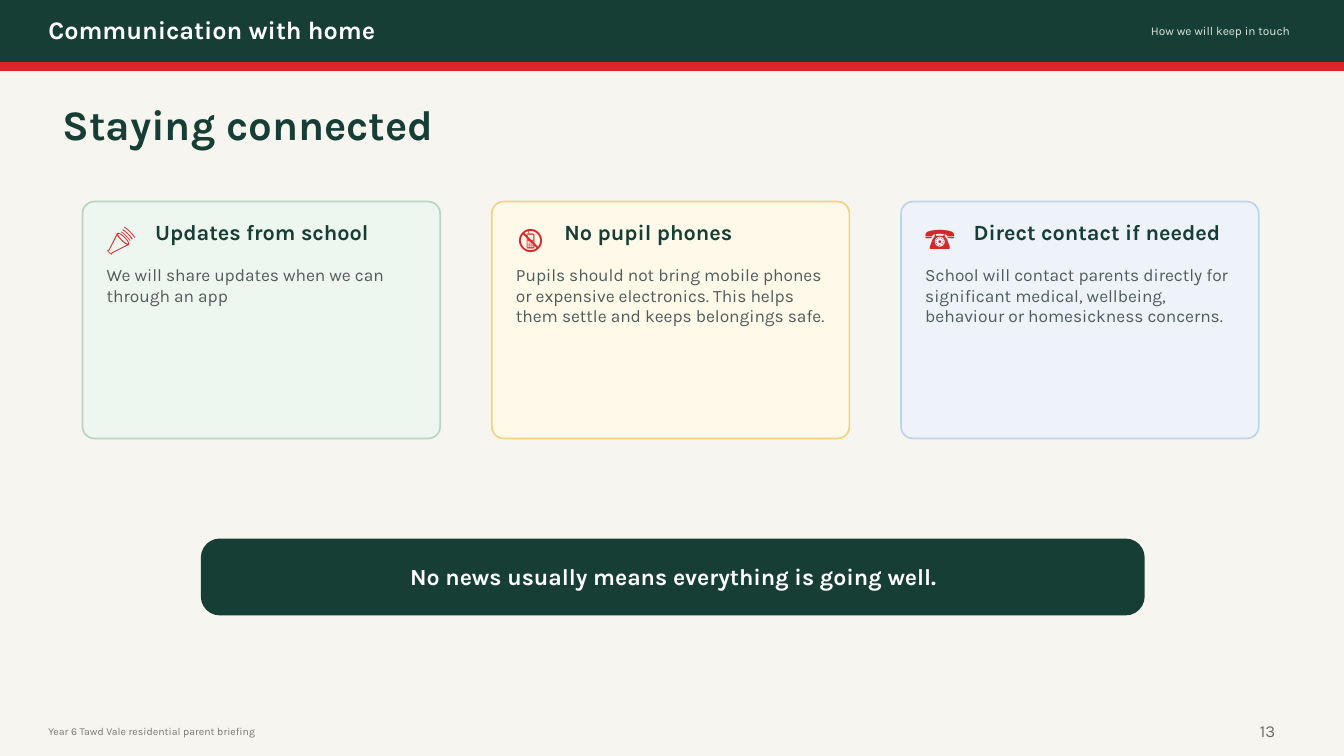
from dataclasses import dataclass

from pptx import Presentation
from pptx import util as u
from pptx.dml.color import RGBColor
from pptx.enum import shapes, text


@dataclass(frozen=True)
class Theme:
    font: str = "Karla"
    # Colours
    paper: str = "F7F5EF"
    green: str = "173E35"
    red: str = "D62828"
    white: str = "FFFFFF"
    pale_green: str = "DCE9DF"
    body: str = "4F5D5A"
    footer: str = "777777"
    number: str = "6B6B6B"
    # Type sizes
    section_size: float = 18
    tagline_size: float = 8.5
    title_size: float = 30
    icon_size: float = 21
    card_title_size: float = 15.5
    body_size: float = 12.4
    banner_size: float = 16.5
    footer_size: float = 7.5
    number_size: float = 12


THEME = Theme()
SLIDE_W, SLIDE_H = 33.87, 19.05
LEFT, CENTER, RIGHT = text.PP_ALIGN.LEFT, text.PP_ALIGN.CENTER, text.PP_ALIGN.RIGHT
TOP, MIDDLE = text.MSO_ANCHOR.TOP, text.MSO_ANCHOR.MIDDLE

# Icon, heading, message, fill, outline
CARDS = [
    ("📣", "Updates from school",
     "We will share updates when we can through an app",
     "EEF6F0", "B8D5C0"),
    ("📵", "No pupil phones",
     "Pupils should not bring mobile phones or expensive electronics. "
     "This helps them settle and keeps belongings safe.",
     "FFF9EA", "F4D183"),
    ("☎", "Direct contact if needed",
     "School will contact parents directly for significant medical, "
     "wellbeing, behaviour or homesickness concerns.",
     "EEF3FA", "BED2EA"),
]


def cm_box(box):
    return [u.Cm(length) for length in box]


def add_panel(slide, box, fill, outline, weight=1.0, radius=None):
    """Filled rectangle; a radius in cm rounds its corners."""
    kind = shapes.MSO_SHAPE.RECTANGLE if radius is None else shapes.MSO_SHAPE.ROUNDED_RECTANGLE
    panel = slide.shapes.add_shape(kind, *cm_box(box))
    if radius is not None:
        panel.adjustments[0] = radius / min(box[2:])
    panel.shadow.inherit = False
    panel.fill.solid()
    panel.fill.fore_color.rgb = RGBColor.from_string(fill)
    panel.line.color.rgb = RGBColor.from_string(outline)
    panel.line.width = u.Pt(weight)


def add_label(slide, box, words, size, colour, bold=False, align=LEFT,
              anchor=MIDDLE, inset=(0, 0)):
    label = slide.shapes.add_textbox(*cm_box(box))
    frame = label.text_frame
    frame.word_wrap = True
    frame.vertical_anchor = anchor
    frame.margin_left = frame.margin_right = u.Cm(inset[0])
    frame.margin_top = frame.margin_bottom = u.Cm(inset[1])
    paragraph = frame.paragraphs[0]
    paragraph.alignment = align
    run = paragraph.add_run()
    run.text = words
    run.font.name = THEME.font
    run.font.size = u.Pt(size)
    run.font.bold = bold
    run.font.color.rgb = RGBColor.from_string(colour)


def add_header(slide, box):
    x, y, w, h = box
    add_panel(slide, box, THEME.green, THEME.green)
    add_label(slide, (x + 1.22, y + 0.3, 26.92, 0.86), "Communication with home",
              THEME.section_size, THEME.white, bold=True)
    add_label(slide, (x + w - 8.09, y + 0.41, 6.73, 0.71), "How we will keep in touch",
              THEME.tagline_size, THEME.pale_green, align=RIGHT)
    # Red rule along the lower edge
    add_panel(slide, (x, y + h, w, 0.2), THEME.red, THEME.red)


def add_card(slide, box, card):
    x, y, w, h = box
    icon, heading, message, fill, outline = card
    add_panel(slide, box, fill, outline, weight=1.2, radius=0.3)
    add_label(slide, (x + 0.41, y + 0.33, 1.14, 1.14), icon,
              THEME.icon_size, THEME.red, align=CENTER)
    add_label(slide, (x + 1.83, y + 0.36, w - 2.24, 0.81), heading,
              THEME.card_title_size, THEME.green, bold=True)
    add_label(slide, (x + 0.61, y + 1.57, w - 1.22, h - 1.98), message,
              THEME.body_size, THEME.body, anchor=TOP)


def add_card_row(slide, box, gap):
    x, y, w, h = box
    card_w = (w - gap * (len(CARDS) - 1)) / len(CARDS)
    for column, card in enumerate(CARDS):
        add_card(slide, (x + column * (card_w + gap), y, card_w, h), card)


def add_banner(slide, box):
    x, y, w, h = box
    add_panel(slide, box, THEME.green, THEME.green, radius=0.46)
    add_label(slide, (x + 0.71, y + 0.64, w - 1.4, 0.56),
              "No news usually means everything is going well.",
              THEME.banner_size, THEME.white, bold=True, align=CENTER)


def add_footer(slide, box):
    x, y, w, h = box
    add_label(slide, (x + 1.22, y + 0.16, 20.83, 0.46),
              "Year 6 Tawd Vale residential parent briefing",
              THEME.footer_size, THEME.footer)
    add_label(slide, (x + w - 2.37, y, 2.21, h), "13", THEME.number_size,
              THEME.number, anchor=TOP, inset=(0.25, 0.13))


def build_contact_slide(deck):
    slide = deck.slides.add_slide(deck.slide_layouts[6])
    slide.background.fill.solid()
    slide.background.fill.fore_color.rgb = RGBColor.from_string(THEME.paper)
    add_header(slide, (0, 0, SLIDE_W, 1.57))
    add_label(slide, (1.57, 2.41, 19.56, 1.4), "Staying connected",
              THEME.title_size, THEME.green, bold=True)
    add_card_row(slide, (2.08, 5.08, 29.64, 5.97), gap=1.3)
    add_banner(slide, (5.08, 13.59, 23.75, 1.9))
    add_footer(slide, (0, 18.03, SLIDE_W, 0.84))


def main():
    deck = Presentation()
    deck.slide_width, deck.slide_height = u.Cm(SLIDE_W), u.Cm(SLIDE_H)
    build_contact_slide(deck)
    deck.save("out.pptx")


if __name__ == "__main__":
    main()
